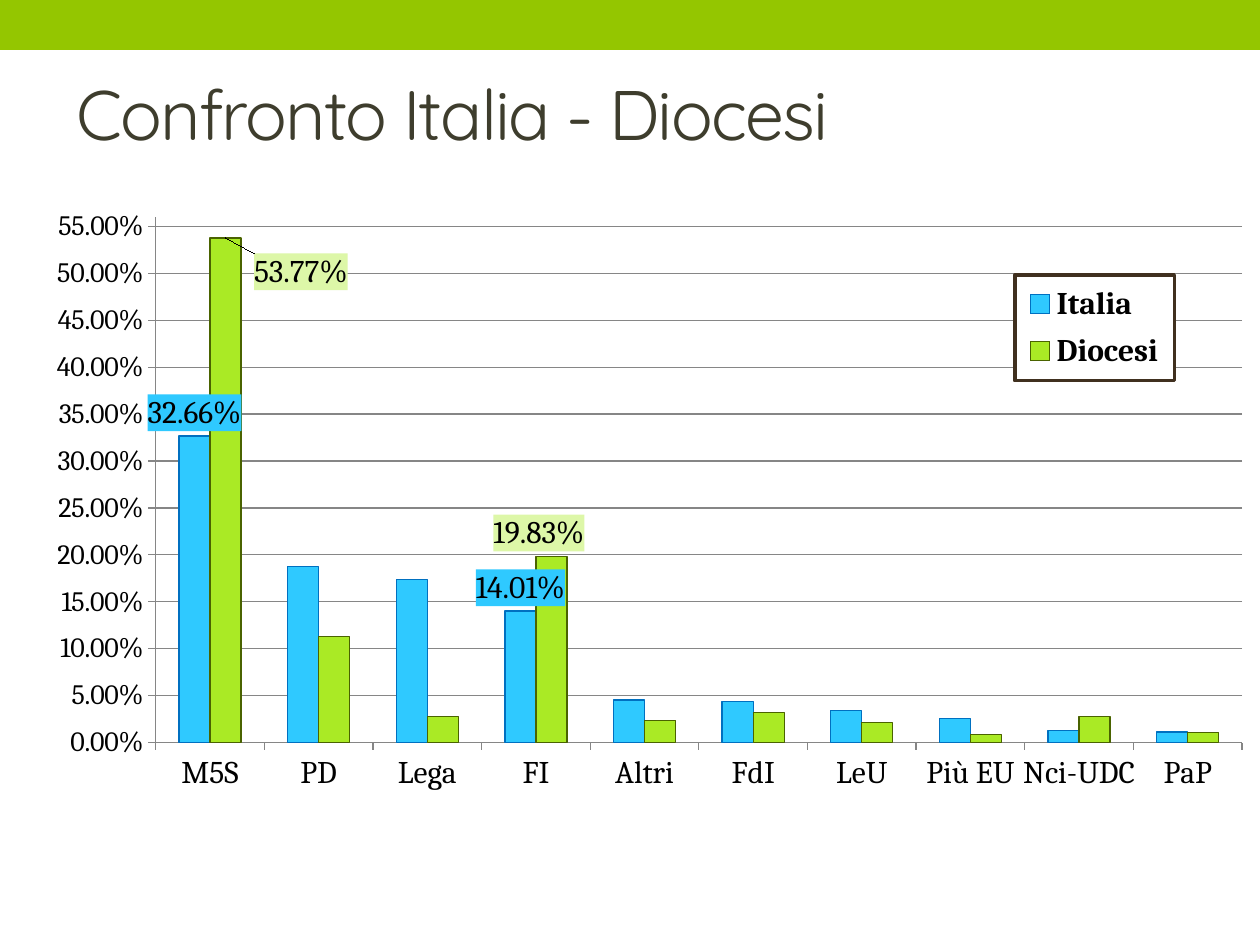
from lxml import etree
from pptx import Presentation
from pptx.chart.data import CategoryChartData
from pptx.dml.color import RGBColor
from pptx.enum.chart import XL_CHART_TYPE, XL_LABEL_POSITION, XL_LEGEND_POSITION, XL_TICK_MARK
from pptx.enum.shapes import MSO_SHAPE
from pptx.enum.text import MSO_ANCHOR, PP_ALIGN
from pptx.oxml import parse_xml
from pptx.util import Emu, Pt

COLUMN = XL_CHART_TYPE.COLUMN_CLUSTERED
ABOVE = XL_LABEL_POSITION.OUTSIDE_END
RIGHT = XL_LEGEND_POSITION.RIGHT
OUT, NONE = XL_TICK_MARK.OUTSIDE, XL_TICK_MARK.NONE
RECT = MSO_SHAPE.RECTANGLE
MIDDLE, LEFT = MSO_ANCHOR.MIDDLE, PP_ALIGN.LEFT

BLACK = RGBColor(0x00, 0x00, 0x00)
GREEN = RGBColor(0x94, 0xC6, 0x00)
OLIVE = RGBColor(0x3E, 0x3D, 0x2D)
GREY = RGBColor(0x86, 0x86, 0x86)
SKY = RGBColor(0x2F, 0xC9, 0xFF)
BLUE = RGBColor(0x00, 0x70, 0xC0)
LIME = RGBColor(0xAA, 0xEA, 0x25)
MOSS = RGBColor(0x4A, 0x63, 0x00)
PALE = RGBColor(0xDD, 0xF7, 0xA8)
BROWN = "40301F"

NS_C = "http://schemas.openxmlformats.org/drawingml/2006/chart"
NS_A = "http://schemas.openxmlformats.org/drawingml/2006/main"
NS_X = "http://schemas.example.com/office/drawing/2012/chart"
SCALE = 914400 / 126

PARTIES = ["M5S", "PD", "Lega", "FI", "Altri", "FdI", "LeU", "Più EU", "Nci-UDC", "PaP"]
ITALY = [0.3266, 0.1872, 0.1737, 0.1401, 0.0452, 0.0435, 0.0339, 0.0255, 0.013, 0.0113]
LOCAL = [0.5377, 0.1127, 0.028, 0.1983, 0.0236, 0.0317, 0.021, 0.0084, 0.0278, 0.0109]
SERIES = [
    ("Italia", ITALY, SKY, BLUE, SKY, {0: None, 3: None}),
    ("Diocesi", LOCAL, LIME, MOSS, PALE, {0: (0.06, 0.08), 3: (-0.01, 0)}),
]


def px(n):
    return Emu(round(n * SCALE))


def node(tag, body):
    return parse_xml(f'<c:{tag} xmlns:c="{NS_C}" xmlns:a="{NS_A}">{body}</c:{tag}>')


def layout(inner=False, **vals):
    modes = "".join(f'<c:{k}Mode val="edge"/>' for k in "xy" if "w" in vals)
    target = '<c:layoutTarget val="inner"/>' if inner else ""
    sizes = "".join(f'<c:{k} val="{v}"/>' for k, v in vals.items())
    return node("layout", f"<c:manualLayout>{target}{modes}{sizes}</c:manualLayout>")


def solid(color):
    return f'<a:solidFill><a:srgbClr val="{color}"/></a:solidFill>'


def place(parent, item, after):
    for old in parent.findall(item.tag):
        parent.remove(old)
    if after is None:
        parent.insert(0, item)
    else:
        parent.find(f"{{{NS_C}}}{after}").addnext(item)


class Deck:
    body = "Cambria"
    head = "Quicksand"

    def __init__(self, wide, high):
        self.file = Presentation()
        self.file.slide_width, self.file.slide_height = px(wide), px(high)
        self.slide = self.file.slides.add_slide(self.file.slide_layouts[5])

    def band(self, x, y, w, h, color):
        shape = self.slide.shapes.add_shape(RECT, px(x), px(y), px(w), px(h))
        shape.shadow.inherit = False
        shape.fill.solid()
        shape.fill.fore_color.rgb = color
        shape.line.fill.background()

    def title(self, text, x, y, w, h):
        shape = self.slide.shapes.title
        shape.left, shape.top, shape.width, shape.height = px(x), px(y), px(w), px(h)
        frame = shape.text_frame
        frame.text = text
        frame.vertical_anchor = MIDDLE
        para = frame.paragraphs[0]
        para.alignment = LEFT
        self.font(para.font, 40, OLIVE, self.head)
        para.runs[0].font._element.set("spc", "-100")

    def font(self, font, size, color=BLACK, name=body, bold=False):
        font.size, font.name, font.bold = Pt(size), name, bold
        font.color.rgb = color

    def chart(self, x, y, w, h):
        data = CategoryChartData(number_format="0.00%")
        data.categories = PARTIES
        for name, vals, *_ in SERIES:
            data.add_series(name, vals)
        chart = self.slide.shapes.add_chart(COLUMN, px(x), px(y), px(w), px(h), data).chart
        self.font(chart.font, 18)
        chart.has_title = False
        plot = chart.plots[0]
        plot.gap_width, plot.overlap, plot.vary_by_categories = 150, 0, False
        area = plot._element.getparent()
        place(area, layout(inner=True, x=0.124, y=0.045, w=0.865, h=0.736), None)
        self.axes(chart)
        self.legend(chart)
        for series, (_, _, fill, edge, tint, marks) in zip(plot.series, SERIES):
            series.format.fill.solid()
            series.format.fill.fore_color.rgb = fill
            series.format.line.color.rgb = edge
            series.format.line.width = Pt(0.75)
            self.labels(series, tint, marks)

    def axes(self, chart):
        value = chart.value_axis
        value.minimum_scale, value.maximum_scale, value.major_unit = 0, 0.56, 0.05
        value.has_major_gridlines = True
        value.tick_labels.number_format = "0.00%"
        value.tick_labels.number_format_is_linked = False
        self.font(value.tick_labels.font, 16)
        for axis in (value, chart.category_axis):
            axis.major_tick_mark, axis.minor_tick_mark = OUT, NONE
        for part in (value, chart.category_axis, value.major_gridlines):
            part.format.line.color.rgb = GREY
            part.format.line.width = Pt(0.75)

    def legend(self, chart):
        chart.has_legend = True
        legend = chart.legend
        legend.position = RIGHT
        legend.include_in_layout = False
        self.font(legend.font, 18, bold=True)
        root = legend._element
        place(root, layout(x=0.808, y=0.126, w=0.127, h=0.148), "legendPos")
        line = f'<a:ln w="25400">{solid(BROWN)}</a:ln>'
        place(root, node("spPr", solid("FFFFFF") + line), "overlay")

    def labels(self, series, tint, marks):
        for spot in marks:
            label = series.points[spot].data_label
            self.font(label.font, 18)
            label.position = ABOVE
        group = series.data_labels
        group.show_value = False
        root = group._element
        for item, shift in zip(root.findall(f"{{{NS_C}}}dLbl"), marks.values()):
            place(item, node("spPr", solid(tint)), "idx")
            if shift:
                place(item, layout(x=shift[0], y=shift[1]), "idx")
        ext = etree.SubElement(etree.SubElement(root, f"{{{NS_C}}}extLst"), f"{{{NS_C}}}ext")
        ext.set("uri", "{CE6537A1-D6FC-4f65-9D91-7224C49458BB}")
        etree.SubElement(ext, f"{{{NS_X}}}showLeaderLines", val="1")


def main():
    deck = Deck(1260, 945)
    deck.band(0, 0, 1260, 50, GREEN)
    deck.title("Confronto Italia - Diocesi", 64, 45, 1134, 136)
    deck.chart(0, 185, 1256, 714)
    deck.file.save("out.pptx")


if __name__ == "__main__":
    main()
